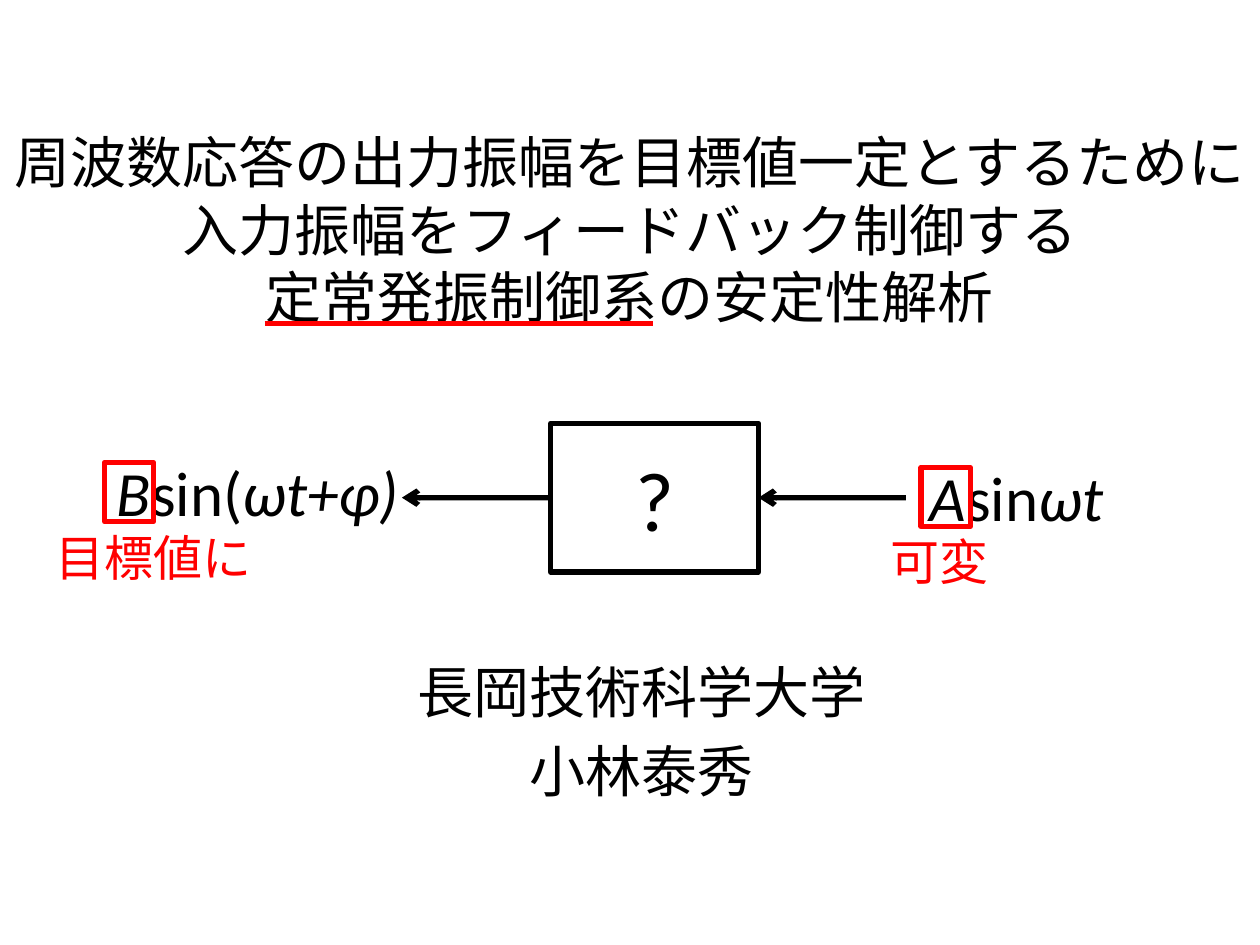
import pptx
import pptx.dml.color
import pptx.enum.shapes
import pptx.enum.text
import pptx.oxml.ns
import pptx.util
from lxml import etree
from pptx.util import Inches

BLACK = "000000"
RED = "FF0000"


def color(value):
    """Turn a hex string into a colour."""
    return pptx.dml.color.RGBColor.from_string(value)


class SlideWriter:
    """Draws styled elements on the current slide."""

    font_name = "Calibri"
    line_width = pptx.util.Pt(3)

    def __init__(self, page):
        """Keep the slide to draw on."""
        self.page = page

    def style_font(self, font, size, hue):
        """Apply the deck font in a size and colour."""
        font.name = self.font_name
        font.size = pptx.util.Pt(size)
        font.color.rgb = color(hue)

    def style_line(self, line, hue):
        """Apply the common line width in a colour."""
        line.width = self.line_width
        line.color.rgb = color(hue)

    def placeholder(self, index, bounds, lines, anchor):
        """Place and fill a centred layout placeholder."""
        holder = self.page.placeholders[index]
        holder.left, holder.top, holder.width, holder.height = map(Inches, bounds)
        frame = holder.text_frame
        frame.text = lines
        frame.word_wrap = True
        frame.auto_size = pptx.enum.text.MSO_AUTO_SIZE.NONE
        frame.vertical_anchor = anchor
        for para in frame.paragraphs:
            para.alignment = pptx.enum.text.PP_ALIGN.CENTER
            self.style_font(para.font, 32, BLACK)

    def rectangle(self, bounds, hue, text=""):
        """Draw an unfilled rectangle with optional centred text."""
        box = self.page.shapes.add_shape(
            pptx.enum.shapes.MSO_SHAPE.RECTANGLE, *map(Inches, bounds))
        box.shadow.inherit = False
        box.fill.background()
        self.style_line(box.line, hue)
        if text:
            box.text_frame.text = text
            box.text_frame.vertical_anchor = pptx.enum.text.MSO_ANCHOR.MIDDLE
            para = box.text_frame.paragraphs[0]
            para.alignment = pptx.enum.text.PP_ALIGN.CENTER
            self.style_font(para.font, 48, hue)
        return box

    def label(self, bounds, spans, size, hue):
        """Write one line of (text, italic) spans."""
        box = self.page.shapes.add_textbox(*map(Inches, bounds))
        frame = box.text_frame
        frame.word_wrap = False
        frame.auto_size = pptx.enum.text.MSO_AUTO_SIZE.SHAPE_TO_FIT_TEXT
        para = frame.paragraphs[0]
        self.style_font(para.font, size, hue)
        for text, italic in spans:
            span = para.add_run()
            span.text = text
            span.font.italic = italic

    def line(self, left, right, height, hue):
        """Draw a horizontal line without a shadow."""
        connector = self.page.shapes.add_connector(
            pptx.enum.shapes.MSO_CONNECTOR.STRAIGHT,
            Inches(left), Inches(height), Inches(right), Inches(height))
        self.style_line(connector.line, hue)
        etree.SubElement(connector.element.spPr, pptx.oxml.ns.qn("a:effectLst"))
        return connector

    def left_arrow(self, left, right, height):
        """Draw a horizontal arrow pointing left."""
        connector = self.line(left, right, height, BLACK)
        outline = connector.element.spPr.find(pptx.oxml.ns.qn("a:ln"))
        etree.SubElement(outline, pptx.oxml.ns.qn("a:headEnd"), type="arrow")
        return connector


def main():
    """Build the title slide and save the deck."""
    deck = pptx.Presentation()
    deck.slide_width, deck.slide_height = Inches(10), Inches(7.5)
    writer = SlideWriter(deck.slides.add_slide(deck.slide_layouts[0]))

    writer.placeholder(
        0, (0, 0.99, 10, 1.65),
        "周波数応答の出力振幅を目標値一定とするために\v"
        "入力振幅をフィードバック制御する\v"
        "定常発振制御系の安定性解析",
        pptx.enum.text.MSO_ANCHOR.MIDDLE)
    writer.placeholder(
        1, (0.43, 5.17, 9.33, 1.92), "長岡技術科学大学\n小林泰秀",
        pptx.enum.text.MSO_ANCHOR.TOP)

    system = writer.rectangle((4.37, 3.36, 1.65, 1.18), BLACK, "?")
    middle = 3.36 + 1.18 / 2
    writer.left_arrow(6.02, 7.19, middle).begin_connect(system, 3)
    writer.left_arrow(3.19, 4.37, middle).end_connect(system, 1)

    writer.label((7.28, 3.59, 1.59, 0.71),
                 [("A", True), ("sin", False), ("ωt", True)], 36, BLACK)
    writer.label((0.83, 3.55, 2.46, 0.71),
                 [("B", True), ("sin(", False), ("ωt+φ)", True)], 36, BLACK)
    writer.rectangle((0.83, 3.67, 0.39, 0.47), RED)
    writer.rectangle((7.31, 3.71, 0.39, 0.47), RED)
    writer.label((0.34, 4.14, 1.75, 0.57), [("目標値に", None)], 28, RED)
    writer.label((6.97, 4.17, 0.99, 0.57), [("可変", None)], 28, RED)
    writer.line(2.1, 5.18, 2.57, RED)

    deck.save("out.pptx")


if __name__ == "__main__":
    main()
